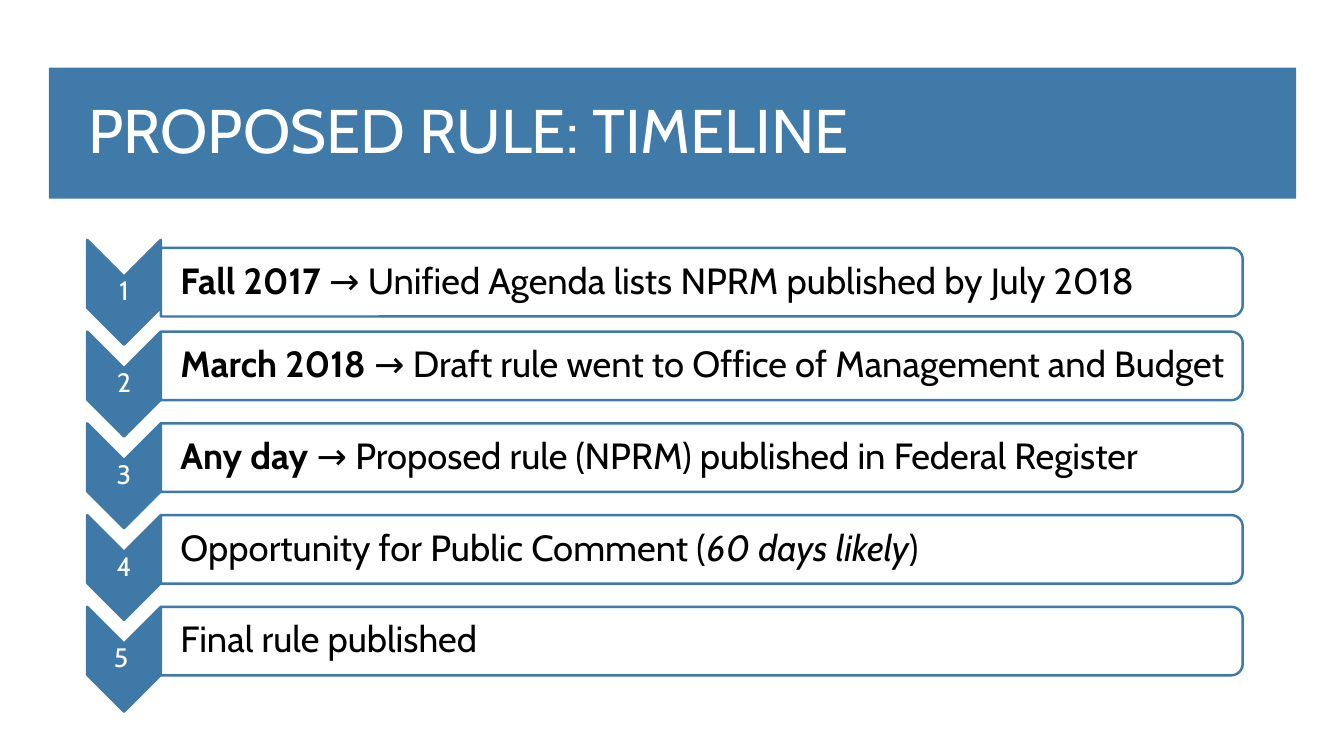
from dataclasses import dataclass

from pptx import Presentation
from pptx.dml.color import RGBColor
from pptx.enum.shapes import MSO_SHAPE
from pptx.enum.text import MSO_ANCHOR, PP_ALIGN
from pptx.util import Inches, Pt

RECTANGLE = MSO_SHAPE.RECTANGLE
CHEVRON = MSO_SHAPE.CHEVRON
ROUNDED_TOP = MSO_SHAPE.ROUND_2_SAME_RECTANGLE
MIDDLE = MSO_ANCHOR.MIDDLE
LEFT, CENTER = PP_ALIGN.LEFT, PP_ALIGN.CENTER

COLORS = {"banner": "407AA9", "accent": "3E79A8", "white": "FFFFFF", "black": "000000"}
FONT = "Cabin"

# Geometry in inches; each step is placed by its centre
CHEVRON_X, FIRST_CHEVRON_Y, STEP_PITCH = 1.23, 2.9, 0.91
BAR_X = 6.96
BAR_TEXT_X = 6.94


@dataclass(frozen=True)
class Run:
    text: str
    bold: bool = False
    italic: bool = False


@dataclass(frozen=True)
class Step:
    number: str
    runs: tuple[Run, ...]
    bar_rise: float = 0.18  # how far the bar centre sits above the chevron centre


@dataclass(frozen=True)
class TextStyle:
    size: float
    color: str
    insets: tuple[float, float, float, float]
    alignment: PP_ALIGN = LEFT
    line_spacing: float = 0.9


TITLE_STYLE = TextStyle(44, "white", (0.1, 0.05, 0.1, 0.05))
NUMBER_STYLE = TextStyle(19, "white", (0.01, 0.01, 0.01, 0.01), CENTER)
STEP_STYLE = TextStyle(26, "black", (0.2, 0.02, 0.02, 0.02))

STEPS = (
    Step("1", (Run("Fall 2017 ", bold=True),
               Run("→ Unified Agenda lists NPRM published by July 2018")), bar_rise=0.1),
    Step("2", (Run("March 2018 ", bold=True),
               Run("→ Draft rule went to Office of Management and Budget"))),
    Step("3", (Run("Any day ", bold=True),
               Run("→ Proposed rule (NPRM) published in Federal Register"))),
    Step("4", (Run("Opportunity for Public Comment ("),
               Run("60 days likely", italic=True), Run(")"))),
    Step("5 ", (Run("Final rule published"),)),
)


def color(name: str) -> RGBColor:
    return RGBColor.from_string(COLORS[name])


def centered(x: float, y: float, width: float, height: float) -> tuple:
    """Left, top, width and height of a box given by its centre."""
    return tuple(Inches(value) for value in (x - width / 2, y - height / 2, width, height))


def add_block(slide, kind: MSO_SHAPE, box: tuple, fill: str, line: str | None = None,
              rotation: float = 0, adjustments: tuple[float, ...] = ()) -> None:
    shape = slide.shapes.add_shape(kind, *box)
    shape.shadow.inherit = False
    shape.rotation = rotation
    for index, value in enumerate(adjustments):
        shape.adjustments[index] = value
    shape.fill.solid()
    shape.fill.fore_color.rgb = color(fill)
    if line is None:
        shape.line.fill.background()
    else:
        shape.line.color.rgb = color(line)
        shape.line.width = Pt(1.75)


def add_text(slide, box: tuple, runs: tuple[Run, ...], style: TextStyle) -> None:
    frame = slide.shapes.add_textbox(*box).text_frame
    left, top, right, bottom = (Inches(inset) for inset in style.insets)
    frame_format = {"word_wrap": True, "vertical_anchor": MIDDLE, "margin_left": left,
                    "margin_top": top, "margin_right": right, "margin_bottom": bottom}
    for name, value in frame_format.items():
        setattr(frame, name, value)
    paragraph = frame.paragraphs[0]
    paragraph.alignment = style.alignment
    paragraph.line_spacing = style.line_spacing
    for item in runs:
        run = paragraph.add_run()
        run.text = item.text
        run_format = {"name": FONT, "size": Pt(style.size),
                      "bold": item.bold, "italic": item.italic}
        for name, value in run_format.items():
            setattr(run.font, name, value)
        run.font.color.rgb = color(style.color)


def add_step(slide, step: Step, chevron_y: float) -> None:
    bar_y = chevron_y - step.bar_rise
    # Numbered chevron, turned to point down
    add_block(slide, CHEVRON, centered(CHEVRON_X, chevron_y, 1.04, 0.73),
              "accent", "accent", 90, (0.5,))
    add_text(slide, centered(CHEVRON_X, chevron_y, 0.73, 0.31),
             (Run(step.number),), NUMBER_STYLE)
    # Bar, turned so that its rounded corners are on the right
    add_block(slide, ROUNDED_TOP, centered(BAR_X, bar_y, 0.68, 10.73),
              "white", "accent", 90, (0.167, 0))
    add_text(slide, centered(BAR_TEXT_X, bar_y, 10.7, 0.61), step.runs, STEP_STYLE)


def main() -> None:
    presentation = Presentation()
    presentation.slide_width = Inches(13.33)
    presentation.slide_height = Inches(7.5)
    slide = presentation.slides.add_slide(presentation.slide_layouts[6])

    # Title banner
    add_block(slide, RECTANGLE, centered(6.67, 1.32, 12.37, 1.3), "banner")
    add_text(slide, centered(6.67, 1.32, 12.06, 1.11),
             (Run(" PROPOSED RULE: TIMELINE"),), TITLE_STYLE)

    # Timeline
    for index, step in enumerate(STEPS):
        add_step(slide, step, FIRST_CHEVRON_Y + index * STEP_PITCH)

    presentation.save("out.pptx")


if __name__ == "__main__":
    main()
